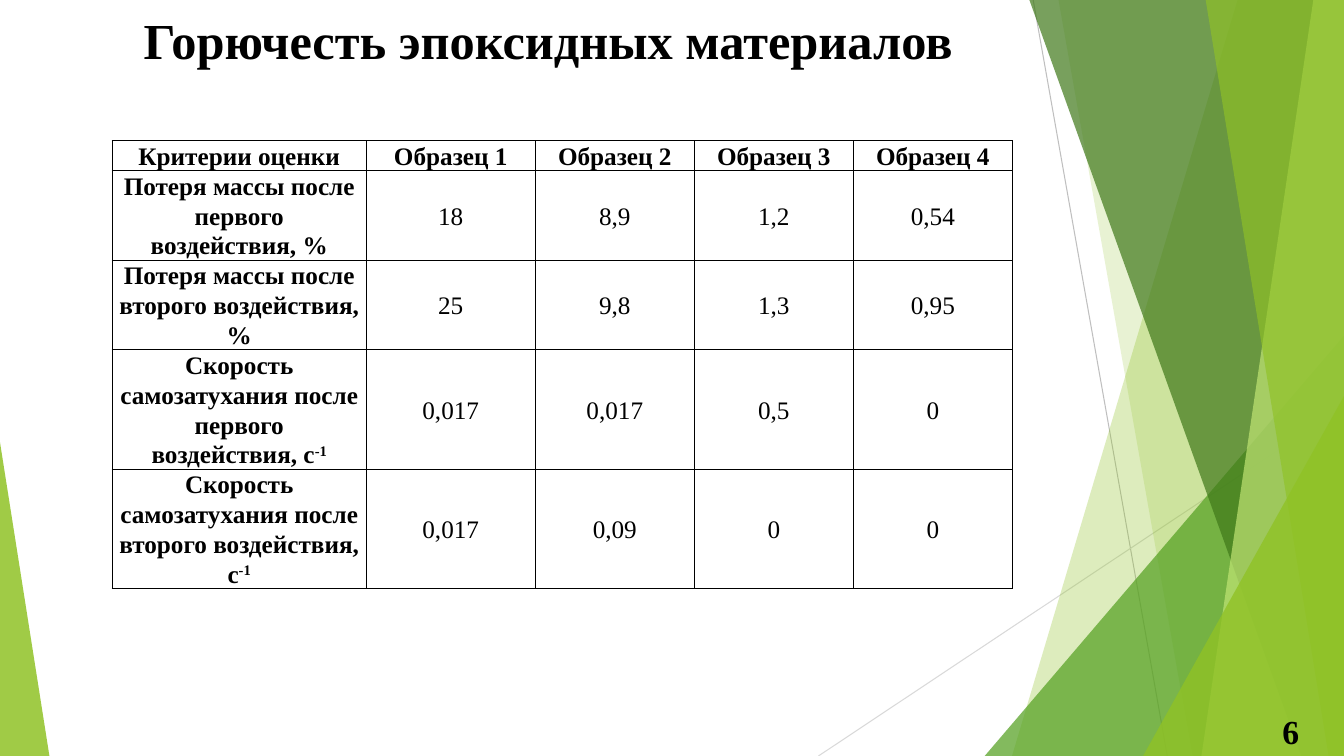
from dataclasses import dataclass

from lxml.etree import SubElement
from pptx import Presentation
from pptx.dml.color import RGBColor
from pptx.enum.shapes import MSO_CONNECTOR, MSO_SHAPE
from pptx.enum.text import MSO_ANCHOR, PP_ALIGN
from pptx.oxml.ns import qn
from pptx.util import Pt


@dataclass(frozen=True)
class Theme:
    font: str = "Times New Roman"
    ink: str = "000000"
    paper: str = "FFFFFF"
    lime: str = "90C226"
    pale_lime: str = "C0E474"
    green: str = "54A021"
    dark_green: str = "3F7819"
    gray: str = "BFBFBF"
    light_gray: str = "D9D9D9"
    title_size: int = 36
    number_size: int = 24
    table_size: int = 18


theme = Theme()


def paint(shape, color, opacity):
    shape.shadow.inherit = False
    shape.line.fill.background()
    shape.fill.solid()
    shape.fill.fore_color.rgb = RGBColor.from_string(color)
    color_node = shape.fill._xPr.find(qn("a:solidFill"))[0]
    SubElement(color_node, qn("a:alpha"), val=str(opacity * 1000))


def add_span(para, text, size, bold):
    span = para.add_run()
    span.text = text
    span.font.name = theme.font
    span.font.size = Pt(size)
    span.font.bold = bold
    span.font.color.rgb = RGBColor.from_string(theme.ink)
    return span


deck = Presentation()
deck.slide_width = Pt(960)
deck.slide_height = Pt(540)
page = deck.slides.add_slide(deck.slide_layouts[6])
page.background.fill.solid()
page.background.fill.fore_color.rgb = RGBColor.from_string(theme.paper)

rays = [
    (738, 0, 833.8, 540, theme.gray),
    (960, 290.2, 584.6, 540, theme.light_gray),
]
for start_x, start_y, end_x, end_y, color in rays:
    ray = page.shapes.add_connector(
        MSO_CONNECTOR.STRAIGHT, Pt(start_x), Pt(start_y), Pt(end_x), Pt(end_y))
    ray.line.color.rgb = RGBColor.from_string(color)
    ray.line.width = Pt(0.75)
    SubElement(ray._element.spPr, qn("a:effectLst"))

facets = [
    ("band", 884.2, 722.9, theme.lime, 30),
    ("band", 756, 851.8, theme.lime, 20),
    ("corner", 703.4, 239.8, theme.green, 72),
    ("band", 735.1, 929.5, theme.dark_green, 70),
    ("band", 938.2, 858.2, theme.pale_lime, 70),
    ("band", 861.1, 949, theme.lime, 65),
    ("corner", 816.5, 283, theme.lime, 80),
]
for kind, first, second, color, opacity in facets:
    if kind == "band":
        builder = page.shapes.build_freeform(Pt(first), Pt(-0.6))
        builder.add_line_segments(
            [(Pt(960), Pt(-0.6)), (Pt(960), Pt(540)), (Pt(second), Pt(540))])
        facet = builder.convert_to_shape()
    else:
        facet = page.shapes.add_shape(
            MSO_SHAPE.ISOSCELES_TRIANGLE,
            Pt(first), Pt(second), Pt(960 - first), Pt(540 - second))
        facet.adjustments[0] = 1
    paint(facet, color, opacity)

left_wedge = page.shapes.add_shape(
    MSO_SHAPE.ISOSCELES_TRIANGLE, Pt(0), Pt(316), Pt(35.3), Pt(224))
left_wedge.adjustments[0] = 0
paint(left_wedge, theme.lime, 85)

column_widths = [181.4, 120.8, 113.6, 113.6, 113.6]
row_heights = [21.5, 64, 64, 85.2, 85.2]
rows = [
    ["Критерии оценки", "Образец 1", "Образец 2", "Образец 3", "Образец 4"],
    ["Потеря массы после первого воздействия, %", "18", "8,9", "1,2", "0,54"],
    ["Потеря массы после второго воздействия, %", "25", "9,8", "1,3", "0,95"],
    ["Скорость самозатухания после первого воздействия, с^-1",
     "0,017", "0,017", "0,5", "0"],
    ["Скорость самозатухания после второго воздействия, с^-1",
     "0,017", "0,09", "0", "0"],
]
table = page.shapes.add_table(
    len(rows), len(column_widths), Pt(80.2), Pt(100.5),
    Pt(sum(column_widths)), Pt(sum(row_heights))).table
for column, width in zip(table.columns, column_widths):
    column.width = Pt(width)
for row, height in zip(table.rows, row_heights):
    row.height = Pt(height)

for row_index, values in enumerate(rows):
    for column_index, value in enumerate(values):
        cell = table.cell(row_index, column_index)
        cell.margin_left = cell.margin_right = Pt(5)
        cell.margin_top = cell.margin_bottom = Pt(0)
        cell.vertical_anchor = MSO_ANCHOR.MIDDLE
        properties = cell._tc.get_or_add_tcPr()
        for side in ("a:lnL", "a:lnR", "a:lnT", "a:lnB"):
            border = SubElement(properties, qn(side), w=str(Pt(1)))
            border_fill = SubElement(border, qn("a:solidFill"))
            SubElement(border_fill, qn("a:srgbClr"), val=theme.ink)
        cell.fill.solid()
        cell.fill.fore_color.rgb = RGBColor.from_string(theme.paper)
        para = cell.text_frame.paragraphs[0]
        para.alignment = PP_ALIGN.CENTER
        para.line_spacing = 1.07
        para.space_after = Pt(8)
        bold = row_index == 0 or column_index == 0
        label, _, exponent = value.partition("^")
        add_span(para, label, theme.table_size, bold)
        if exponent:
            power = add_span(para, exponent, theme.table_size, bold)
            power.font._element.set("baseline", "30000")

captions = [
    ("Горючесть эпоксидных материалов", 53.3, 0, 676.8, 56.2, theme.title_size),
    ("6", 906.5, 504, 31, 36, theme.number_size),
]
for text, left, top, width, height, size in captions:
    box = page.shapes.add_textbox(Pt(left), Pt(top), Pt(width), Pt(height))
    box.text_frame.word_wrap = True
    box.text_frame.vertical_anchor = MSO_ANCHOR.MIDDLE
    para = box.text_frame.paragraphs[0]
    para.alignment = PP_ALIGN.CENTER
    add_span(para, text, size, True)

deck.save("out.pptx")
